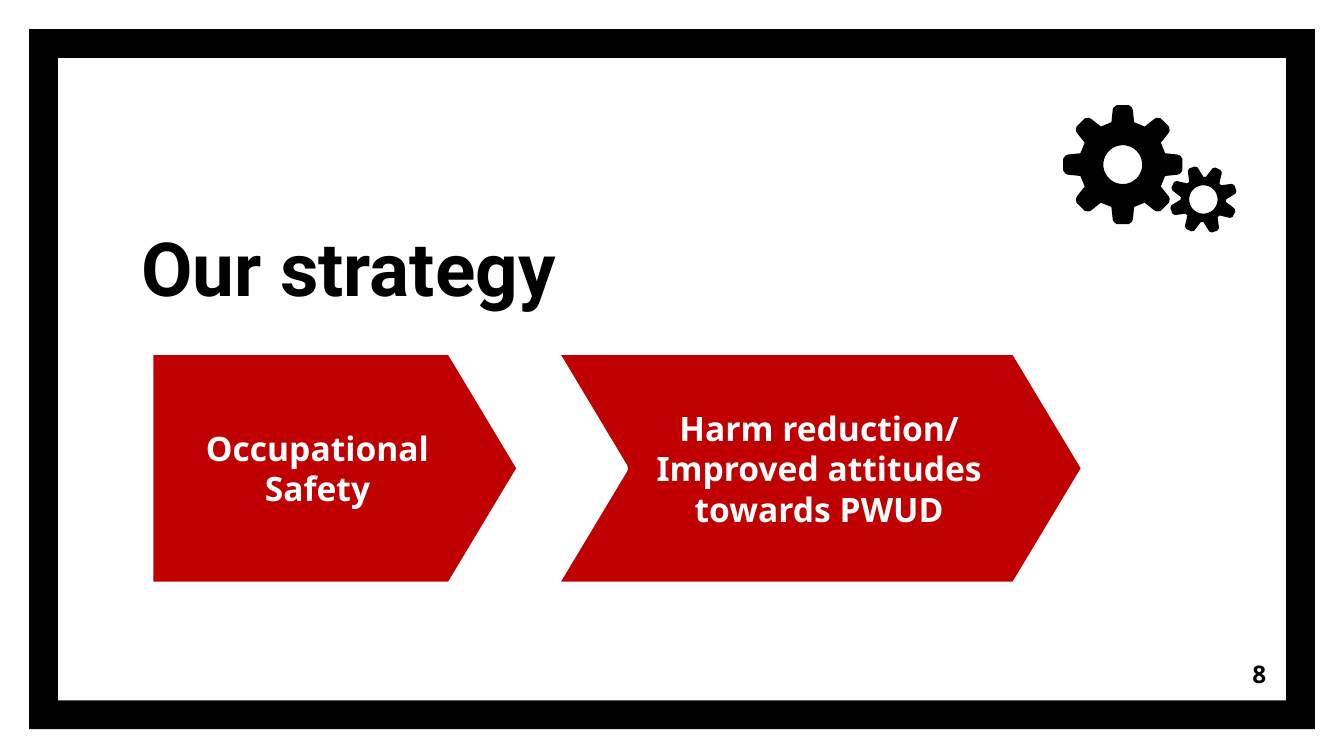
from math import cos, pi, sin

from pptx import Presentation
from pptx.dml.color import RGBColor
from pptx.enum.shapes import MSO_SHAPE
from pptx.enum.text import MSO_ANCHOR, PP_ALIGN
from pptx.util import Pt

BLACK, WHITE, RED = "000000", "FFFFFF", "C00000"
HEADING_FONT, BODY_FONT = "Roboto", "Noto Sans"


def color(hex_code):
    """Return the colour for a hex string."""
    return RGBColor.from_string(hex_code)


def circle(radius, steps=48):
    """Return points evenly spaced around the origin."""
    return [(radius * cos(2 * pi * i / steps), radius * sin(2 * pi * i / steps))
            for i in range(steps)]


def gear_outline(half_tooth, turn, teeth=8):
    """Return the outline of a gear from (half width, radius) pairs of one tooth."""
    tooth = [(-w, r) for w, r in half_tooth] + [(w, r) for w, r in reversed(half_tooth)]
    angles = [turn + 2 * pi * i / teeth for i in range(teeth)]
    return [(w * cos(a) + r * sin(a), w * sin(a) - r * cos(a))
            for a in angles for w, r in tooth]


class StrategySlide:
    """Hold the style and the current slide."""

    def __init__(self, slide):
        """Keep the slide to draw on."""
        self.slide = slide

    def set_text(self, frame, text, size, font, ink, align, anchor):
        """Fill a text frame with one formatted paragraph."""
        frame.word_wrap = True
        frame.vertical_anchor = anchor
        frame.margin_left = frame.margin_right = Pt(7.2)
        frame.margin_top = frame.margin_bottom = Pt(7.2)
        paragraph = frame.paragraphs[0]
        paragraph.text = text
        paragraph.alignment = align
        paragraph.font.size = Pt(size)
        paragraph.font.name = font
        paragraph.font.bold = True
        paragraph.font.color.rgb = color(ink)

    def title(self, text, left, top, width, height):
        """Place and format the slide title."""
        heading = self.slide.shapes.title
        heading.left, heading.top = Pt(left), Pt(top)
        heading.width, heading.height = Pt(width), Pt(height)
        self.set_text(heading.text_frame, text, 40, HEADING_FONT, BLACK,
                      PP_ALIGN.LEFT, MSO_ANCHOR.BOTTOM)

    def block(self, preset, left, top, width, height, fill, adjustment):
        """Add a filled preset shape without an outline."""
        block = self.slide.shapes.add_shape(preset, Pt(left), Pt(top), Pt(width), Pt(height))
        block.adjustments[0] = adjustment
        block.shadow.inherit = False
        block.fill.solid()
        block.fill.fore_color.rgb = color(fill)
        block.line.fill.background()
        return block

    def step(self, preset, text, left, width):
        """Add one arrow-shaped step of the strategy."""
        arrow = self.block(preset, left, 187.2, width, 127.4, RED, 0.3)
        arrow.line.color.rgb = color(WHITE)
        arrow.line.width = Pt(6)
        self.set_text(arrow.text_frame, text, 18, BODY_FONT, WHITE,
                      PP_ALIGN.CENTER, MSO_ANCHOR.MIDDLE)

    def gear(self, group, center_x, center_y, half_tooth, hole, turn=0):
        """Add a gear with a round hole to a group."""
        outer, inner = (
            [(Pt(center_x + x), Pt(center_y + y)) for x, y in contour]
            for contour in (gear_outline(half_tooth, turn), circle(hole))
        )
        builder = group.shapes.build_freeform(*outer[0])
        builder.add_line_segments(outer[1:])
        builder.move_to(*inner[0])
        builder.add_line_segments(inner[1:])
        gear = builder.convert_to_shape()
        gear.shadow.inherit = False
        gear.fill.solid()
        gear.fill.fore_color.rgb = color(BLACK)
        gear.line.fill.background()

    def page_number(self, text, left, top, width, height):
        """Add the page number."""
        box = self.slide.shapes.add_textbox(Pt(left), Pt(top), Pt(width), Pt(height))
        self.set_text(box.text_frame, text, 13, BODY_FONT, BLACK,
                      PP_ALIGN.RIGHT, MSO_ANCHOR.MIDDLE)


def main():
    """Build the strategy slide."""
    deck = Presentation()
    deck.slide_width, deck.slide_height = Pt(720), Pt(405)
    strategy = StrategySlide(deck.slides.add_slide(deck.slide_layouts[5]))

    strategy.block(MSO_SHAPE.FRAME, 15.6, 15.6, 688.8, 375, BLACK, 0.041)
    strategy.title("Our strategy", 68.4, 67, 401, 107.3)
    strategy.step(MSO_SHAPE.PENTAGON, "Occupational Safety", 79.2, 200.9)
    strategy.step(MSO_SHAPE.CHEVRON,
                  "Harm reduction/\vImproved attitudes towards PWUD", 295.2, 287.3)

    gears = strategy.slide.shapes.add_group_shape()
    strategy.gear(gears, 601.5, 88.2,
                  [(6.1, 22.7), (5.4, 29.2), (4.9, 30.6), (3.2, 31.9)], 10.4)
    strategy.gear(gears, 644.7, 106.9,
                  [(4, 11.5), (3, 16.2), (2.7, 17.3), (1.5, 18.2)], 7.6, -0.34)

    strategy.page_number("8", 642.2, 345.6, 43.2, 31)
    deck.save("out.pptx")


if __name__ == "__main__":
    main()
